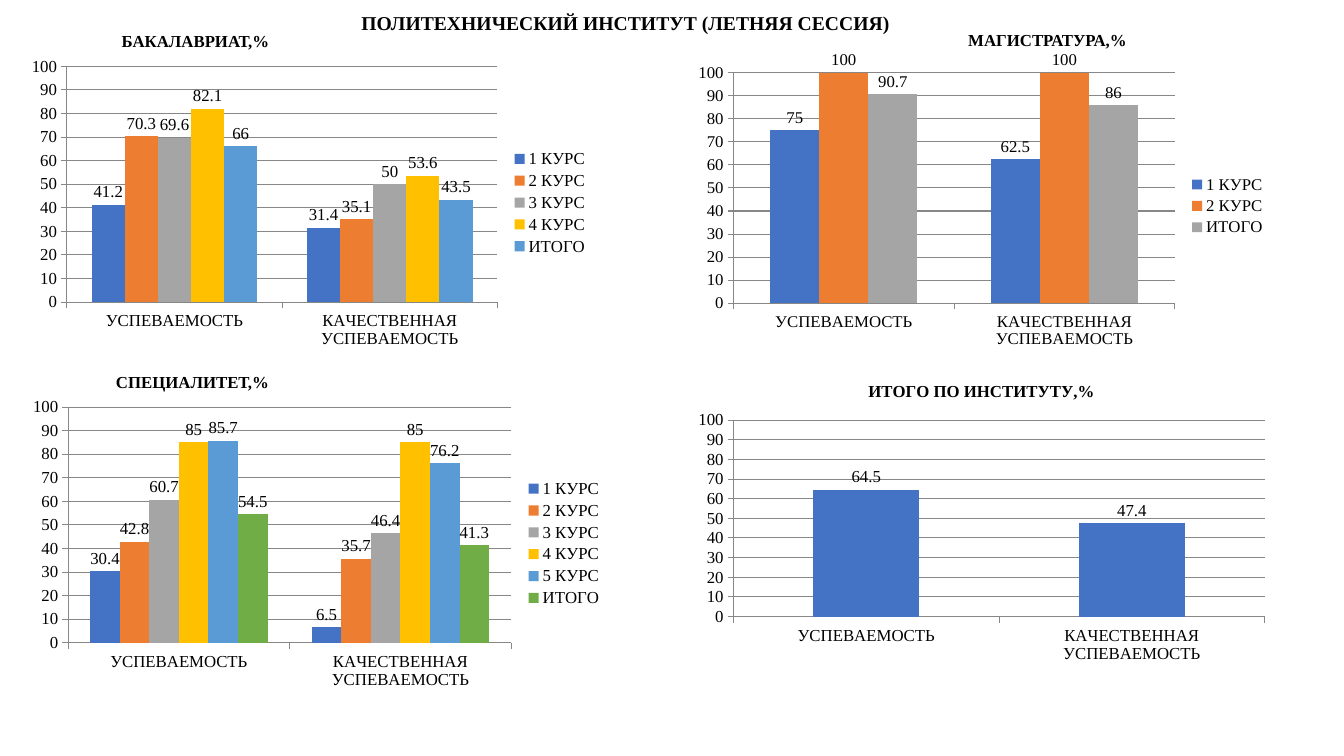
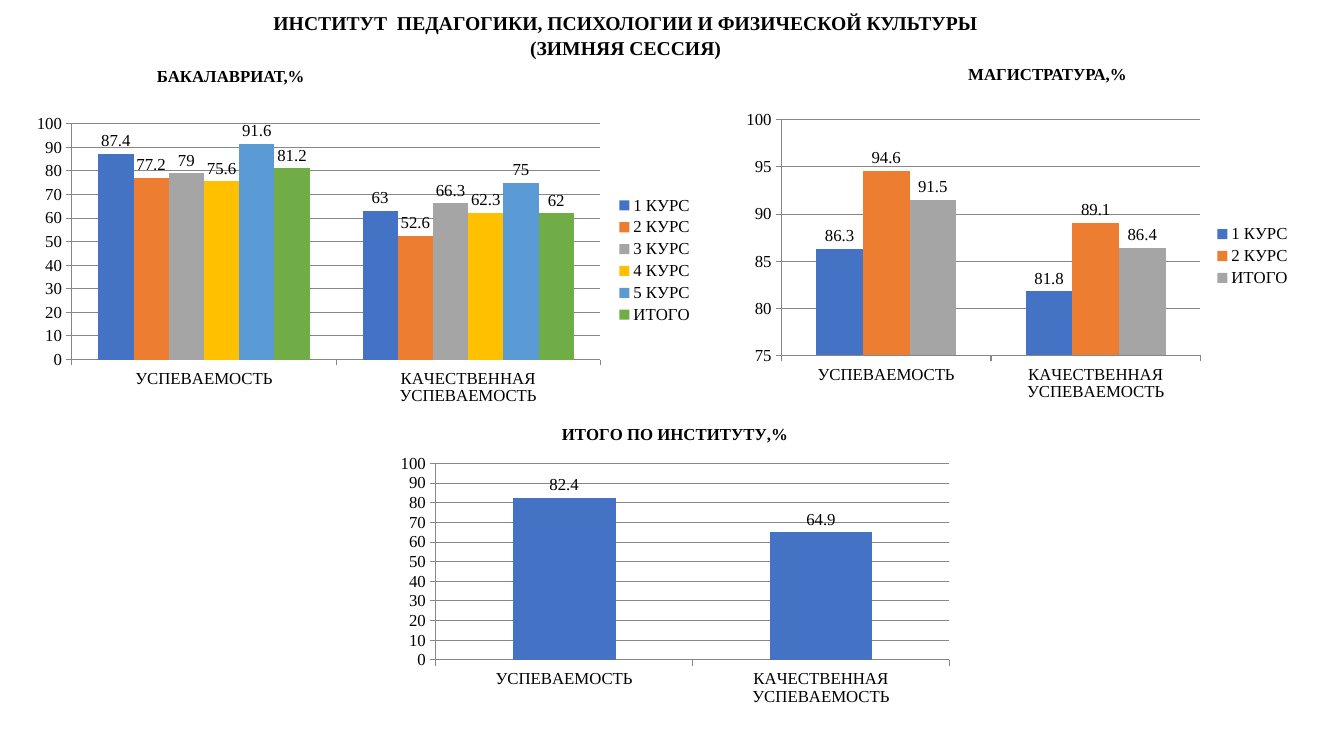
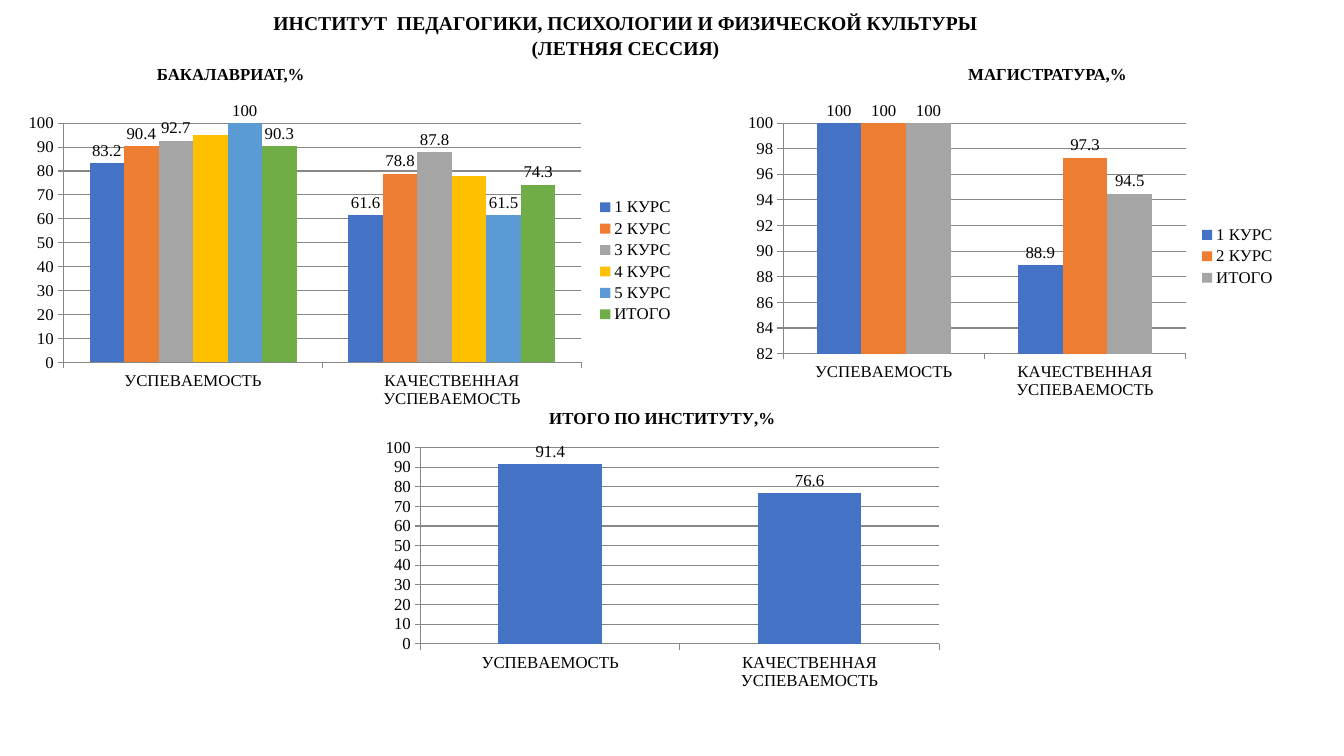
from pptx import Presentation
from pptx.chart.data import CategoryChartData
from pptx.dml.color import RGBColor
from pptx.enum.chart import XL_CHART_TYPE, XL_LABEL_POSITION, XL_LEGEND_POSITION, XL_TICK_MARK
from pptx.enum.text import PP_ALIGN
from pptx.util import Inches, Pt

COLUMNS = XL_CHART_TYPE.COLUMN_CLUSTERED
LABEL_ABOVE = XL_LABEL_POSITION.OUTSIDE_END
LEGEND_RIGHT = XL_LEGEND_POSITION.RIGHT
TICK_OUT = XL_TICK_MARK.OUTSIDE
TICK_NONE = XL_TICK_MARK.NONE
CENTER = PP_ALIGN.CENTER

BLACK = RGBColor(0x00, 0x00, 0x00)
GRID_GRAY = RGBColor(0x87, 0x87, 0x87)
BLUE = RGBColor(0x44, 0x72, 0xC4)
ORANGE = RGBColor(0xED, 0x7D, 0x31)
GRAY = RGBColor(0xA5, 0xA5, 0xA5)
YELLOW = RGBColor(0xFF, 0xC0, 0x00)
SKY = RGBColor(0x5B, 0x9B, 0xD5)
GREEN = RGBColor(0x70, 0xAD, 0x47)
PALETTE = [BLUE, ORANGE, GRAY, YELLOW, SKY, GREEN]

CATEGORIES = ["УСПЕВАЕМОСТЬ", "КАЧЕСТВЕННАЯ УСПЕВАЕМОСТЬ"]
BACHELOR = "БАКАЛАВРИАТ,%"
MASTER = "МАГИСТРАТУРА,%"
SPECIALIST = "СПЕЦИАЛИТЕТ,%"
TOTAL = "ИТОГО ПО ИНСТИТУТУ,%"
PEDAGOGY = "ИНСТИТУТ  ПЕДАГОГИКИ, ПСИХОЛОГИИ И ФИЗИЧЕСКОЙ КУЛЬТУРЫ"


class SessionDeck:
    font_name = "Times New Roman"
    title_size = Pt(14)
    body_size = Pt(12)

    def __init__(self):
        self.deck = Presentation()
        self.deck.slide_width = Inches(13.33)
        self.deck.slide_height = Inches(7.5)
        self.page = None

    def style_font(self, font, size, bold=False):
        font.name = self.font_name
        font.size = size
        font.bold = bold
        font.color.rgb = BLACK

    def add_page(self, title, title_height):
        self.page = self.deck.slides.add_slide(self.deck.slide_layouts[6])
        self.add_text(title, 2.52, 0.04, 7.37, title_height, self.title_size)

    def add_text(self, text, left, top, width, height, size):
        box = self.page.shapes.add_textbox(
            Inches(left), Inches(top), Inches(width), Inches(height))
        box.text_frame.word_wrap = True
        para = box.text_frame.paragraphs[0]
        para.text = text
        para.alignment = CENTER
        para.line_spacing = 1.07
        self.style_font(para.font, size, True)

    def add_heading(self, text, left, top):
        self.add_text(text, left, top, 2.84, 0.26, self.body_size)

    def add_columns(self, place, names, values, low=0, step=10, unlabelled=()):
        data = CategoryChartData()
        data.categories = CATEGORIES
        for name, pair in zip(names, values):
            data.add_series(name, pair)
        frame = self.page.shapes.add_chart(COLUMNS, *map(Inches, place), data)
        chart = frame.chart
        self.style_font(chart.font, self.body_size)
        chart.has_title = False
        chart.has_legend = len(names) > 1
        if chart.has_legend:
            chart.legend.position = LEGEND_RIGHT
            chart.legend.include_in_layout = False
            self.style_font(chart.legend.font, self.body_size)
        self.style_axes(chart, low, step)
        plot = chart.plots[0]
        plot.gap_width = 150
        plot.overlap = 0
        plot.vary_by_categories = False
        for series, color in zip(plot.series, PALETTE):
            series.format.fill.solid()
            series.format.fill.fore_color.rgb = color
            series.invert_if_negative = False
            if series.name not in unlabelled:
                labels = series.data_labels
                labels.show_value = True
                labels.position = LABEL_ABOVE
                self.style_font(labels.font, self.body_size)
        return chart

    def style_axes(self, chart, low, step):
        scale = chart.value_axis
        scale.minimum_scale = low
        scale.maximum_scale = 100
        scale.major_unit = step
        scale.has_major_gridlines = True
        lines = [scale.major_gridlines.format.line]
        for axis in (scale, chart.category_axis):
            axis.major_tick_mark = TICK_OUT
            axis.minor_tick_mark = TICK_NONE
            self.style_font(axis.tick_labels.font, self.body_size)
            lines.append(axis.format.line)
        for line in lines:
            line.color.rgb = GRID_GRAY
            line.width = Pt(0.75)

    def add_total(self, place, values):
        chart = self.add_columns(place, ["Series 1"], [values])
        chart.has_title = True
        para = chart.chart_title.text_frame.paragraphs[0]
        para.text = TOTAL
        self.style_font(para.font, self.body_size, True)

    def save(self):
        self.deck.save("out.pptx")


def courses(count):
    return [f"{number} КУРС" for number in range(1, count + 1)] + ["ИТОГО"]


def main():
    show = SessionDeck()

    show.add_page("ПОЛИТЕХНИЧЕСКИЙ ИНСТИТУТ (ЛЕТНЯЯ СЕССИЯ)", 0.4)
    show.add_heading(BACHELOR, 0.52, 0.24)
    show.add_heading(MASTER, 8.97, 0.23)
    show.add_heading(SPECIALIST, 0.49, 3.63)
    show.add_columns((0.2, 0.51, 5.74, 3), courses(4), [
        (41.2, 31.4), (70.3, 35.1), (69.6, 50), (82.1, 53.6), (66, 43.5)])
    show.add_columns((0.21, 3.89, 5.87, 3), courses(5), [
        (30.4, 6.5), (42.8, 35.7), (60.7, 46.4), (85, 85), (85.7, 76.2), (54.5, 41.3)])
    show.add_columns((6.81, 0.51, 5.85, 3), courses(2), [
        (75, 62.5), (100, 100), (90.7, 86)])
    show.add_total((6.81, 3.63, 5.85, 3), (64.5, 47.4))

    show.add_page(f"{PEDAGOGY} (ЗИМНЯЯ СЕССИЯ)", 0.78)
    show.add_heading(BACHELOR, 0.87, 0.59)
    show.add_heading(MASTER, 8.97, 0.57)
    show.add_columns((0.23, 1.08, 6.75, 3), courses(5), [
        (87.4, 63), (77.2, 52.6), (79, 66.3), (75.6, 62.3), (91.6, 75), (81.2, 62)])
    show.add_columns((7.29, 1.04, 5.62, 3), courses(2), [
        (86.3, 81.8), (94.6, 89.1), (91.5, 86.4)], low=75, step=5)
    show.add_total((3.86, 4.06, 5.67, 3), (82.4, 64.9))

    show.add_page(f"{PEDAGOGY} (ЛЕТНЯЯ СЕССИЯ)", 0.52)
    show.add_heading(BACHELOR, 0.87, 0.57)
    show.add_heading(MASTER, 8.97, 0.57)
    show.add_columns((0.15, 1.01, 6.64, 3.09), courses(5), [
        (83.2, 61.6), (90.4, 78.8), (92.7, 87.8), (95, 78), (100, 61.5), (90.3, 74.3)],
        unlabelled=("4 КУРС",))
    show.add_columns((7.31, 1.01, 5.45, 3), courses(2), [
        (100, 88.9), (100, 97.3), (100, 94.5)], low=82, step=2)
    show.add_total((3.71, 3.9, 5.72, 3), (91.4, 76.6))

    show.save()


if __name__ == "__main__":
    main()
